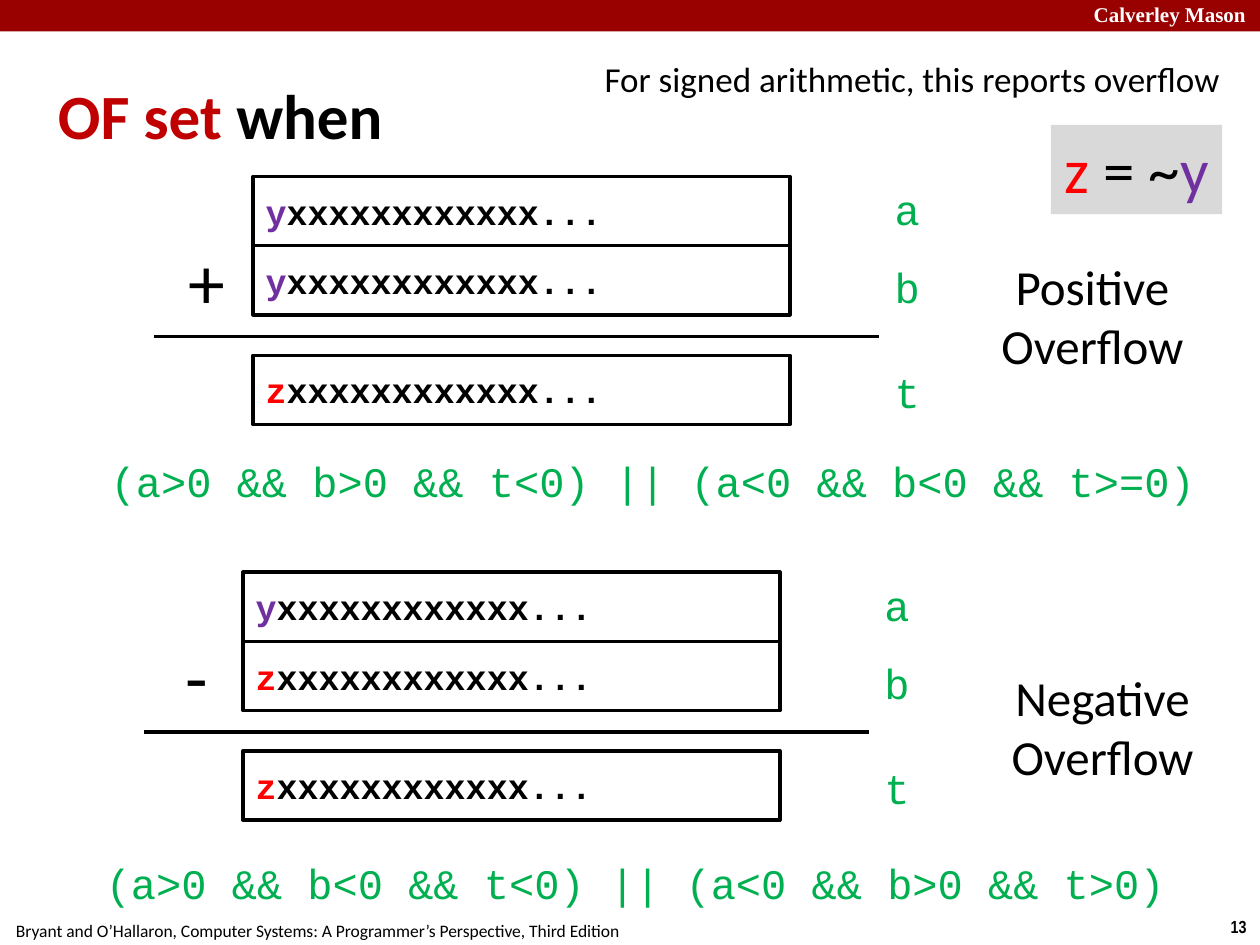
from dataclasses import dataclass
from typing import NamedTuple

from lxml.etree import SubElement
from pptx import Presentation
from pptx.dml.color import RGBColor
from pptx.enum.shapes import MSO_CONNECTOR, MSO_SHAPE
from pptx.enum.text import MSO_ANCHOR, PP_ALIGN
from pptx.oxml.ns import qn
from pptx.util import Inches, Pt


@dataclass(frozen=True)
class Theme:
    black: str = "000000"
    white: str = "FFFFFF"
    banner: str = "990000"
    title_red: str = "C00000"
    green: str = "00B050"
    panel: str = "D9D9D9"
    y_purple: str = "7030A0"
    z_red: str = "FF0000"
    body: str = "Calibri"
    code: str = "Courier New"
    narrow: str = "Arial Narrow"
    serif: str = "Times New Roman"
    footer_size: int = 10
    banner_size: int = 12
    bits_size: int = 20
    code_size: int = 24
    verdict_size: int = 28
    title_size: int = 36
    operator_size: int = 42
    rule_width: int = 2


THEME = Theme()
SIGN_COLORS = {"y": THEME.y_purple, "z": THEME.z_red}


class Box(NamedTuple):
    left: float
    top: float
    width: float
    height: float

    def lengths(self) -> list:
        return [Inches(value) for value in self]


class Style(NamedTuple):
    size: int
    font: str = THEME.body
    bold: bool = False


class Piece(NamedTuple):
    text: str
    color: str = THEME.black


@dataclass(frozen=True)
class Sum:
    """One column calculation; signs are the top bits of a, b and t."""
    left: float
    top: float
    operator: str
    signs: str
    condition: str
    condition_box: Box
    verdict: str
    verdict_box: Box


SUMS = [
    Sum(2.01, 1.4, "+", "yyz", "(a>0 && b>0 && t<0) || (a<0 && b<0 && t>=0)",
        Box(0.68, 3.57, 9, 0.5), "Positive", Box(7.84, 1.99, 1.66, 1.04)),
    Sum(1.93, 4.54, "-", "yzz", "(a>0 && b<0 && t<0) || (a<0 && b>0 && t>0)",
        Box(0.54, 6.76, 9, 0.5), "Negative", Box(7.92, 5.25, 1.66, 1.04)),
]
ROW_OFFSETS = (0, 0.55, 1.42)
LABEL_OFFSETS = (0.01, 0.63, 1.46)


def write(shape, lines: list[list[Piece]], style: Style,
          align=PP_ALIGN.CENTER, anchor=MSO_ANCHOR.TOP,
          wrap: bool = False, inset: float | None = None) -> None:
    frame = shape.text_frame
    frame.word_wrap = wrap
    frame.vertical_anchor = anchor
    if inset is not None:
        frame.margin_left = frame.margin_right = Inches(inset)
        frame.margin_top = frame.margin_bottom = Inches(inset)
    for index, pieces in enumerate(lines):
        paragraph = frame.add_paragraph() if index else frame.paragraphs[0]
        paragraph.alignment = align
        for piece in pieces:
            run = paragraph.add_run()
            run.text = piece.text
            run.font.size = Pt(style.size)
            run.font.name = style.font
            run.font.bold = style.bold
            run.font.color.rgb = RGBColor.from_string(piece.color)


def add_text(slide, box: Box, lines: list[list[Piece]], style: Style, **layout) -> None:
    write(slide.shapes.add_textbox(*box.lengths()), lines, style, **layout)


def add_rectangle(slide, box: Box, fill: str | None = None, line: str | None = None):
    shape = slide.shapes.add_shape(MSO_SHAPE.RECTANGLE, *box.lengths())
    shape.shadow.inherit = False
    if fill:
        shape.fill.solid()
        shape.fill.fore_color.rgb = RGBColor.from_string(fill)
    else:
        shape.fill.background()
    if line:
        shape.line.color.rgb = RGBColor.from_string(line)
        shape.line.width = Pt(THEME.rule_width)
    else:
        shape.line.fill.background()
    return shape


def add_rule(slide, left: float, right: float, top: float) -> None:
    rule = slide.shapes.add_connector(
        MSO_CONNECTOR.STRAIGHT, Inches(left), Inches(top), Inches(right), Inches(top))
    rule.line.color.rgb = RGBColor.from_string(THEME.black)
    rule.line.width = Pt(THEME.rule_width)
    SubElement(rule._element.spPr, qn("a:effectLst"))


def add_sum(slide, item: Sum) -> None:
    code = Style(THEME.code_size, THEME.code)
    rows = zip("abt", item.signs, ROW_OFFSETS, LABEL_OFFSETS)
    for label, sign, row_offset, label_offset in rows:
        row = add_rectangle(slide, Box(item.left, item.top + row_offset, 4.26, 0.55),
                            line=THEME.black)
        write(row, [[Piece(sign, SIGN_COLORS[sign]), Piece("xxxxxxxxxxxx...")]],
              Style(THEME.bits_size, THEME.code, True),
              align=PP_ALIGN.LEFT, anchor=MSO_ANCHOR.MIDDLE, wrap=True)
        add_text(slide, Box(item.left + 4.99, item.top + label_offset, 0.4, 0.5),
                 [[Piece(label, THEME.green)]], code)
    add_rule(slide, item.left - 0.79, item.left + 4.97, item.top + 1.27)
    add_text(slide, Box(item.left - 0.62, item.top + 0.42, 0.5, 0.81),
             [[Piece(item.operator)]], Style(THEME.operator_size))
    add_text(slide, item.condition_box, [[Piece(item.condition, THEME.green)]], code)
    add_text(slide, item.verdict_box, [[Piece(item.verdict)], [Piece("Overflow")]],
             Style(THEME.verdict_size))


def add_frame(slide) -> None:
    """Draw the banner, the footer and the page number."""
    add_rectangle(slide, Box(0, 0, 10, 0.25), fill=THEME.banner)
    add_text(slide, Box(8.64, -0.03, 1.36, 0.28),
             [[Piece("Calverley Mason", THEME.white)]],
             Style(THEME.banner_size, THEME.serif, True),
             align=PP_ALIGN.LEFT, inset=0.04)
    add_text(slide, Box(-0.02, 7.25, 5.08, 0.27),
             [[Piece("Bryant and O’Hallaron, Computer Systems: "
                     "A Programmer’s Perspective, Third Edition")]],
             Style(THEME.footer_size))
    add_text(slide, Box(9.66, 7.22, 0.34, 0.27), [[Piece("13")]],
             Style(THEME.footer_size, THEME.narrow, True))


def add_title(slide) -> None:
    title = slide.shapes.title
    title.left, title.top, title.width, title.height = Box(0.42, 0.28, 9.17, 1.25).lengths()
    write(title, [[Piece("OF set ", THEME.title_red), Piece("when")]],
          Style(THEME.title_size, bold=True), align=PP_ALIGN.LEFT,
          anchor=MSO_ANCHOR.MIDDLE, wrap=True, inset=0.04)


def main() -> None:
    presentation = Presentation()
    presentation.slide_width, presentation.slide_height = Inches(10), Inches(7.5)
    slide = presentation.slides.add_slide(presentation.slide_layouts[5])
    add_frame(slide)
    add_title(slide)
    add_text(slide, Box(4.67, 0.41, 5.14, 0.44),
             [[Piece("For signed arithmetic, this reports overflow")]],
             Style(THEME.bits_size))
    relation = add_rectangle(slide, Box(8.34, 0.99, 1.36, 0.71), fill=THEME.panel)
    write(relation, [[Piece("z", THEME.z_red), Piece(" = ~"), Piece("y", THEME.y_purple)]],
          Style(THEME.title_size))
    for item in SUMS:
        add_sum(slide, item)
    presentation.save("out.pptx")


if __name__ == "__main__":
    main()
